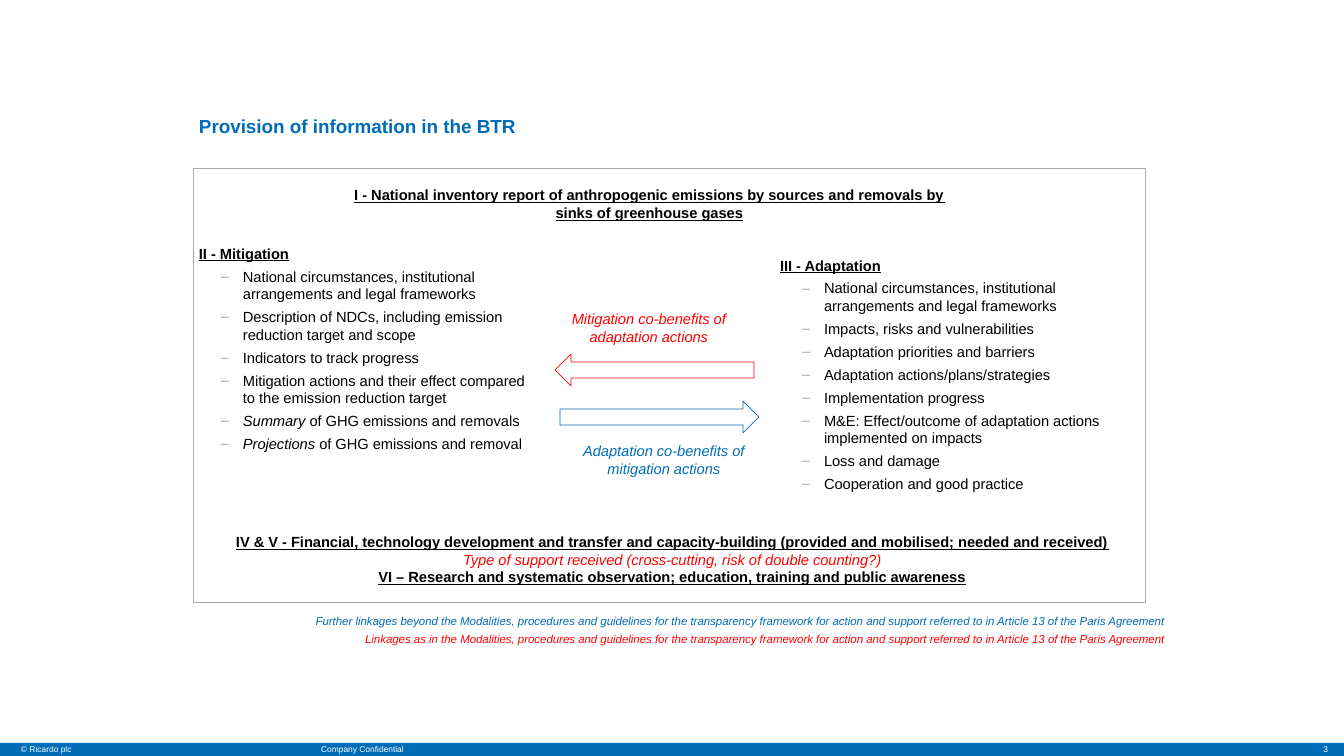
from lxml import etree
from pptx import Presentation
from pptx import util as u
from pptx.dml.color import RGBColor
from pptx.enum import shapes, text
from pptx.oxml.ns import qn

BLUE = RGBColor(0x00, 0x6B, 0xB7)
RED = RGBColor(0xFF, 0x00, 0x00)
BLACK = RGBColor(0x00, 0x00, 0x00)
WHITE = RGBColor(0xFF, 0xFF, 0xFF)
GREY = RGBColor(0xA7, 0xA9, 0xAC)
LEFT, MID, RIGHT = text.PP_ALIGN.LEFT, text.PP_ALIGN.CENTER, text.PP_ALIGN.RIGHT
KIND = shapes.MSO_SHAPE
SCALE = 914400 / 100.8

deck = Presentation()
deck.slide_width, deck.slide_height = [u.Emu(round(n * SCALE)) for n in (1344, 756)]
slide = deck.slides.add_slide(deck.slide_layouts[6])


def draw(kind, area, fill, line):
    item = slide.shapes.add_shape(kind, *[round(n * SCALE) for n in area])
    item.shadow.inherit = False
    if fill is None:
        item.fill.background()
    else:
        item.fill.solid()
        item.fill.fore_color.rgb = fill
    if line is None:
        item.line.fill.background()
    else:
        item.line.color.rgb = line
        item.line.width = u.Pt(0.5)


def write(area, rows, size, align=LEFT, inset=(0, 0), anchor=text.MSO_ANCHOR.TOP):
    box = slide.shapes.add_textbox(*[round(n * SCALE) for n in area])
    frame = box.text_frame
    frame.word_wrap = True
    frame.vertical_anchor = anchor
    frame.margin_left = frame.margin_right = round(inset[0] * SCALE)
    frame.margin_top = frame.margin_bottom = round(inset[1] * SCALE)
    for i, runs in enumerate(rows):
        para = frame.paragraphs[0] if i == 0 else frame.add_paragraph()
        para.alignment = align
        for words, color, style in runs:
            run = para.add_run()
            run.text = words
            font = run.font
            font.name, font.size = "Arial", u.Pt(size)
            font.color.rgb = color
            font.bold, font.italic, font.underline = [c in style for c in "biu"]
    return frame.paragraphs


draw(KIND.RECTANGLE, (0, 743, 1344, 13), BLUE, None)
feet = [
    ((21, 743, 146, 13), "© Ricardo plc", LEFT),
    ((167, 743, 391, 13), "Company Confidential", MID),
    ((1290, 743, 38, 13), "3", RIGHT),
]
for area, words, align in feet:
    paras = write(area, [[(words, WHITE, "")]], 6, align, anchor=text.MSO_ANCHOR.MIDDLE)
    paras[0].line_spacing = 0.9

write((199, 115, 830, 23), [[("Provision of information in the BTR", BLUE, "b")]], 13.5)

lists = [
    ((780, 238, 355, 273), "III - Adaptation", [
        ("", "National circumstances, institutional arrangements and legal frameworks"),
        ("", "Impacts, risks and vulnerabilities"),
        ("", "Adaptation priorities and barriers"),
        ("", "Adaptation actions/plans/strategies"),
        ("", "Implementation progress"),
        ("", "M&E: Effect/outcome of adaptation actions implemented on impacts"),
        ("", "Loss and damage"),
        ("", "Cooperation and good practice"),
    ]),
    ((199, 212, 342, 273), "II - Mitigation", [
        ("", "National circumstances, institutional arrangements and legal frameworks"),
        ("", "Description of NDCs, including emission reduction target and scope"),
        ("", "Indicators to track progress"),
        ("", "Mitigation actions and their effect compared to the emission reduction target"),
        ("Summary", " of GHG emissions and removals"),
        ("Projections", " of GHG emissions and removal"),
    ]),
]
for area, head, points in lists:
    rows = [[(head, BLACK, "bu")]]
    for lead, rest in points:
        rows.append([r for r in ((lead, BLACK, "i"), (rest, BLACK, "")) if r[0]])
    paras = write(area, rows, 10.5, anchor=text.MSO_ANCHOR.MIDDLE)
    for para in paras[1:]:
        para.level = 1
        para.space_before = u.Pt(3.8)
        props = para._p.get_or_add_pPr()
        props.set("marL", str(round(44 * SCALE)))
        props.set("indent", str(round(-22 * SCALE)))
        tint = etree.SubElement(props, qn("a:buClr"))
        etree.SubElement(tint, qn("a:srgbClr")).set("val", str(GREY))
        etree.SubElement(props, qn("a:buFont")).set("typeface", "Arial")
        etree.SubElement(props, qn("a:buChar")).set("char", "–")

write((258, 181, 783, 45), [
    [("I - National inventory report of anthropogenic emissions by sources and removals by", BLACK, "bu")],
    [("sinks of greenhouse gases", BLACK, "bu")],
], 10.5, MID, (10, 5))
write((223, 528, 899, 64), [
    [("IV & V - Financial, technology development and transfer and capacity-building "
      "(provided and mobilised; needed and received)", BLACK, "bu")],
    [("Type of support received (cross-cutting, risk of double counting?)", RED, "i")],
    [("VI – Research and systematic observation; education, training and public awareness", BLACK, "bu")],
], 10.5, MID, (10, 5))

draw(KIND.RECTANGLE, (193, 168, 952, 434), None, GREY)
draw(KIND.LEFT_ARROW, (555, 354, 199, 32), WHITE, RED)
draw(KIND.RIGHT_ARROW, (560, 401, 199, 32), WHITE, BLUE)
write((533, 307, 232, 41), [[("Mitigation co-benefits of adaptation actions", RED, "i")]], 10.5, MID, (3, 3))
write((548, 439, 232, 41), [[("Adaptation co-benefits of mitigation actions", BLUE, "i")]], 10.5, MID, (3, 3))

scope = (" the Modalities, procedures and guidelines for the transparency framework for action "
         "and support referred to in Article 13 of the Paris Agreement")
for top, lead, color in ((609, "Further linkages beyond", BLUE), (627, "Linkages as in", RED)):
    write((264, top, 911, 24), [[(lead + scope, color, "i")]], 8.2, RIGHT, (10, 5))

deck.save("out.pptx")
